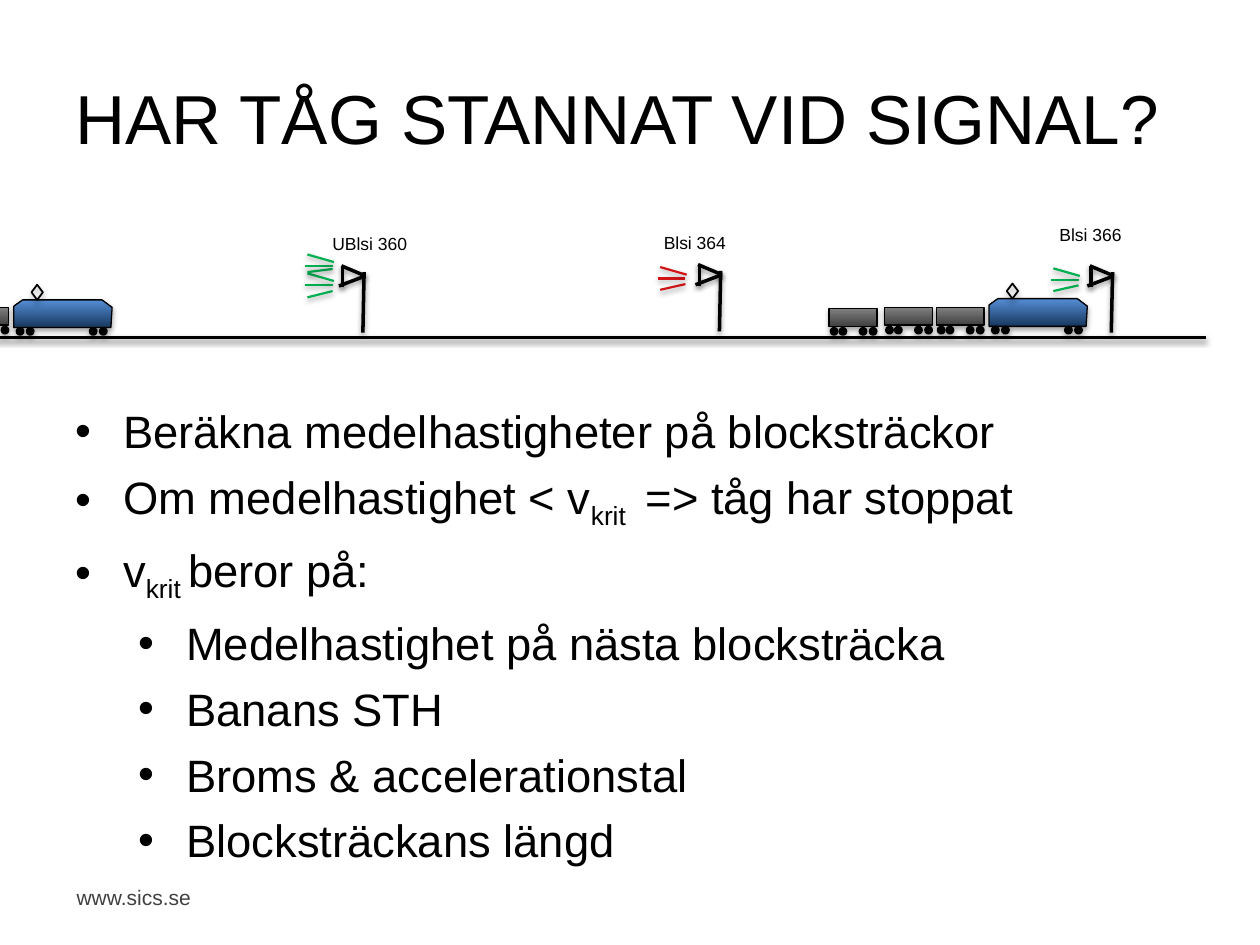
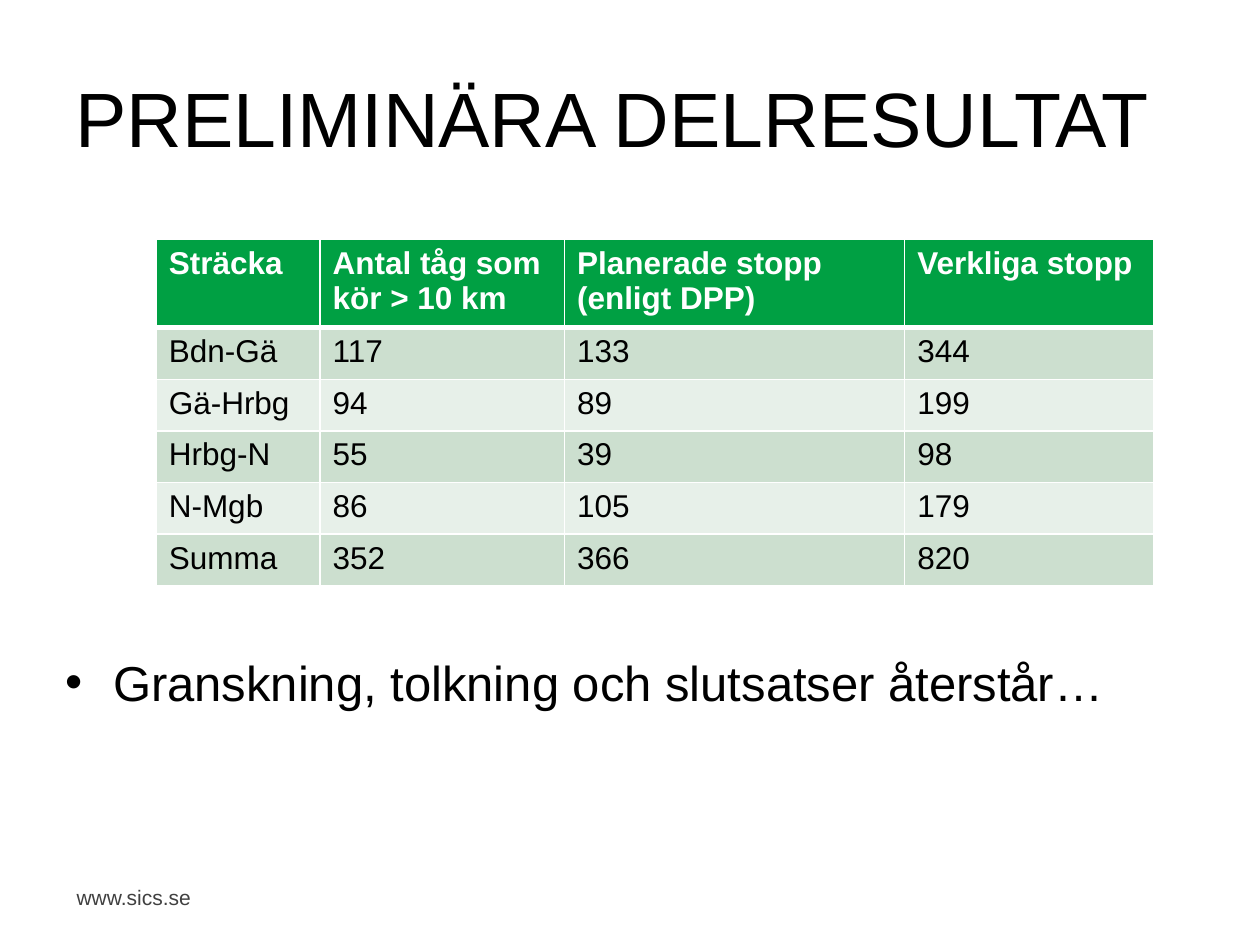
"""Build two slides on trains stopping at signals."""
from lxml import etree
from pptx import Presentation, oxml
from pptx import util as u
from pptx.dml.color import RGBColor
from pptx.enum import shapes, text
from pptx.oxml import ns

FONT = "Arial"
BLACK, WHITE, GREY = "000000", "FFFFFF", "404040"
GREEN, RED = "00B050", "D21417"
HEADER, BAND_DARK, BAND_LIGHT = "00A043", "CCDFCF", "E7F0E9"
rgb = RGBColor.from_string


def add_text(page, at, paragraphs, size, color=BLACK, bullets=False, anchor=text.MSO_ANCHOR.TOP, wrap=True):
    """Add a text box; each paragraph is a level and a list of runs, with "_" marking subscript."""
    box = page.shapes.add_textbox(*[u.Inches(n) for n in at])
    frame = box.text_frame
    frame.word_wrap = wrap
    frame.vertical_anchor = anchor
    for index, (level, runs) in enumerate(paragraphs):
        para = frame.paragraphs[0] if index == 0 else frame.add_paragraph()
        if bullets:
            props = para._p.get_or_add_pPr()
            props.set("marL", str(u.Inches(0.38 + 0.5 * level)))
            props.set("indent", str(u.Inches(-0.38)))
            etree.SubElement(props, ns.qn("a:buFont"), typeface=FONT)
            etree.SubElement(props, ns.qn("a:buChar"), char="•")
            para.level = level
            if index:
                para.space_before = u.Pt(size / 4)
        for words in runs:
            span = para.add_run()
            span.text = words.lstrip("_")
            span.font.name, span.font.size = FONT, u.Pt(size)
            span.font.color.rgb = rgb(color)
            if words.startswith("_"):
                span._r.get_or_add_rPr().set("baseline", "-25000")


def outline(shape, color, width, alpha=35, distance=1.8):
    """Draw the outline of a shape or connector and give it a soft shadow."""
    shape.line.color.rgb = rgb(color)
    shape.line.width = u.Pt(width)
    shape._element.spPr.append(oxml.parse_xml(
        f'<a:effectLst {ns.nsdecls("a")}><a:outerShdw blurRad="{u.Pt(3.1)}" dist="{u.Pt(distance)}" '
        f'dir="5400000" rotWithShape="0"><a:srgbClr val="{BLACK}"><a:alpha val="{alpha * 1000}"/>'
        '</a:srgbClr></a:outerShdw></a:effectLst>'))


deck = Presentation()
deck.slide_width, deck.slide_height = u.Inches(10), u.Inches(7.5)
pages = []
for title, size in [("HAR TÅG STANNAT VID SIGNAL?", 39.6), ("PRELIMINÄRA DELRESULTAT", 44)]:
    page = deck.slides.add_slide(deck.slide_layouts[6])
    add_text(page, (0.51, 6.97, 1.12, 0.3), [(0, ["www.sics.se"])], 12, GREY, wrap=False)
    add_text(page, (0.5, 0.3, 9, 1.25), [(0, [title])], size, anchor=text.MSO_ANCHOR.MIDDLE)
    pages.append(page)
signal_page, result_page = pages

add_text(signal_page, (0.5, 3.15, 9, 3.42), [
    (0, ["Beräkna medelhastigheter på blocksträckor"]),
    (0, ["Om medelhastighet < v", "_krit ", " => tåg har stoppat"]),
    (0, ["v", "_krit ", "beror på:"]),
    (1, ["Medelhastighet på nästa blocksträcka"]),
    (1, ["Banans STH"]),
    (1, ["Broms & accelerationstal"]),
    (1, ["Blocksträckans längd"]),
], 25.9, bullets=True)

strokes = [(-0.37, 2.68, 9.57, 2.68, BLACK, 2)]
mast = [(-0.02, 0.45, -0.01, -0.03), (-0.21, 0.08, 0, 0), (-0.19, -0.08, 0, 0), (-0.18, 0.09, -0.18, -0.08)]
for x, y in [(2.9, 2.19), (5.73, 2.18), (8.84, 2.19)]:
    strokes += [(x + x1, y + y1, x + x2, y + y2, BLACK, 2) for x1, y1, x2, y2 in mast]
for x, y, droop, color in [(2.42, 2.26, 0.1, GREEN), (2.42, 2.11, 0.05, GREEN),
                           (5.22, 2.21, 0.09, RED), (8.34, 2.22, 0.09, GREEN)]:
    strokes += [
        (x + 0.02, y + droop, x + 0.22, y + droop / 2, color, 1.25),
        (x, y, x + 0.22, y, color, 1.25),
        (x + 0.02, y - 0.09, x + 0.23, y - 0.03, color, 1.25),
    ]
for *ends, color, width in strokes:
    stroke = signal_page.shapes.add_connector(shapes.MSO_CONNECTOR.STRAIGHT, *[u.Inches(n) for n in ends])
    outline(stroke, color, width, alpha=38, distance=1.6)

for label, *at in [("UBlsi 360", 2.54, 1.8, 0.84, 0.27), ("Blsi 364", 5.17, 1.79, 0.87, 0.27),
                   ("Blsi 366", 8.31, 1.73, 0.91, 0.27)]:
    add_text(signal_page, at, [(0, [label])], 10)

wagon = ([(0.38, 0), (0.38, 0.14), (0, 0.14), (0, 0)], (0.01, 0.08, 0.24, 0.32), 0.15, ("404040", "808080"))
engine = ([(0, 0.22), (0.77, 0.22), (0.78, 0.06), (0.7, 0), (0.07, 0), (0, 0.05)],
          (0.02, 0.1, 0.6, 0.68), 0.22, ("17375E", "558ED5"))
vehicles = [(6.58, 2.45, wagon), (7.02, 2.44, wagon), (7.43, 2.44, wagon), (-0.31, 2.44, wagon),
            (0.11, 2.38, engine), (7.85, 2.37, engine)]
for left, top, (corners, wheels, wheel_drop, shades) in vehicles:
    points = [(u.Inches(left + x), u.Inches(top + y)) for x, y in corners]
    builder = signal_page.shapes.build_freeform(*points[0])
    builder.add_line_segments(points[1:], close=True)
    body = builder.convert_to_shape()
    body.fill.gradient()
    body.fill.gradient_angle = 90
    for stop, shade in zip(body.fill.gradient_stops, shades):
        stop.color.rgb = rgb(shade)
    outline(body, BLACK, 0.75)
    for offset in wheels:
        if left + offset > 0:
            wheel = signal_page.shapes.add_shape(
                shapes.MSO_SHAPE.OVAL, u.Inches(left + offset), u.Inches(top + wheel_drop),
                u.Inches(0.06), u.Inches(0.06))
            wheel.fill.solid()
            wheel.fill.fore_color.rgb = rgb(BLACK)
            outline(wheel, BLACK, 0.75)
    if corners is engine[0]:
        pantograph = signal_page.shapes.add_shape(
            shapes.MSO_SHAPE.DIAMOND, u.Inches(left + 0.14), u.Inches(top - 0.12), u.Inches(0.09), u.Inches(0.12))
        pantograph.fill.background()
        outline(pantograph, BLACK, 1)

rows = [
    ("Sträcka", "Antal tåg som\nkör > 10 km", "Planerade stopp (enligt DPP)", "Verkliga stopp"),
    ("Bdn-Gä", "117", "133", "344"),
    ("Gä-Hrbg", "94", "89", "199"),
    ("Hrbg-N", "55", "39", "98"),
    ("N-Mgb", "86", "105", "179"),
    ("Summa", "352", "366", "820"),
]
table = result_page.shapes.add_table(
    len(rows), 4, u.Inches(1.24), u.Inches(1.9), u.Inches(7.92), u.Inches(2.7)).table
for column, width in zip(table.columns, (1.3, 1.94, 2.7, 1.98)):
    column.width = u.Inches(width)
for r, row in enumerate(rows):
    table.rows[r].height = u.Inches(0.41 if r else 0.65)
    for c, words in enumerate(row):
        cell = table.cell(r, c)
        cell.fill.solid()
        cell.fill.fore_color.rgb = rgb((BAND_DARK if r % 2 else BAND_LIGHT) if r else HEADER)
        para = cell.text_frame.paragraphs[0]
        for index, line in enumerate(words.split("\n")):
            if index:
                para.add_line_break()
            span = para.add_run()
            span.text = line
            span.font.name, span.font.size, span.font.bold = FONT, u.Pt(18), r == 0
            span.font.color.rgb = rgb(BLACK if r else WHITE)
        borders = [("L", 1), ("R", 1), ("T", 3 if r == 1 else 1), ("B", 1 if r else 3)]
        for index, (side, width) in enumerate(borders):
            cell._tc.get_or_add_tcPr().insert(index, oxml.parse_xml(
                f'<a:ln{side} {ns.nsdecls("a")} w="{u.Pt(width)}"><a:solidFill>'
                f'<a:srgbClr val="{WHITE}"/></a:solidFill></a:ln{side}>'))

add_text(result_page, (0.42, 5.13, 9, 1.14), [(0, ["Granskning, tolkning och slutsatser återstår…"])],
         28, bullets=True)

deck.save("out.pptx")
